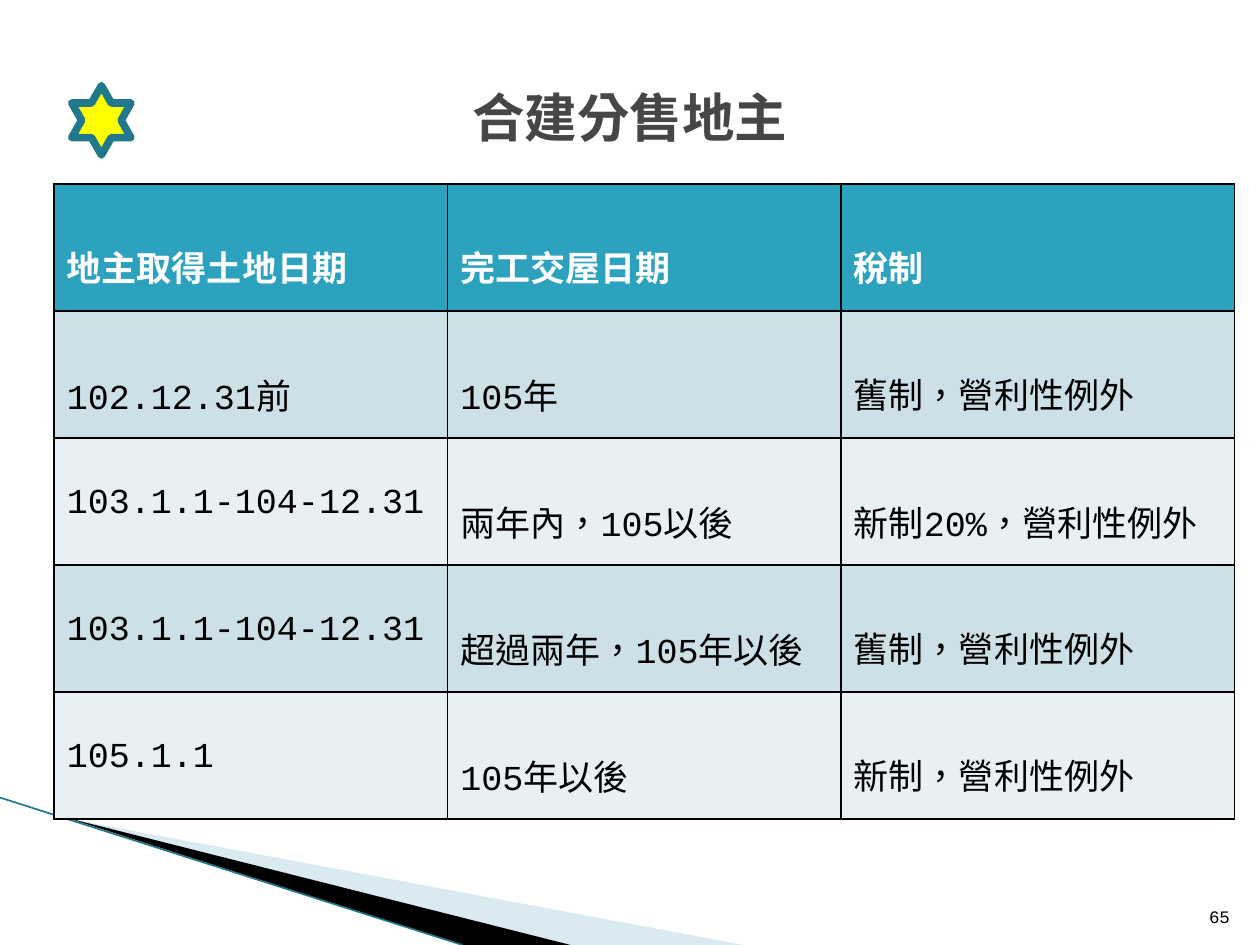
"""Build a slide with a table of tax regimes for landowners in joint construction."""
from lxml.etree import SubElement
from pptx import Presentation
from pptx.dml.color import RGBColor
from pptx.enum.lang import MSO_LANGUAGE_ID as Language
from pptx.enum.shapes import MSO_CONNECTOR as Connector, MSO_SHAPE as Preset
from pptx.enum.text import MSO_ANCHOR as Anchor, PP_ALIGN as Align
from pptx.oxml.ns import qn
from pptx.util import Inches, Pt

TITLE = "合建分售地主"
PAGE_NUMBER = "65"
ROWS = [
    ("地主取得土地日期", "完工交屋日期", "稅制"),
    ("102.12.31前", "105年", "舊制，營利性例外"),
    ("103.1.1-104-12.31", "兩年內，105以後", "新制20%，營利性例外"),
    ("103.1.1-104-12.31", "超過兩年，105年以後", "舊制，營利性例外"),
    ("105.1.1", "105年以後", "新制，營利性例外"),
]
WIDTH, HEIGHT = 10, 7.5
TABLE_PLACE = (0.43, 1.46, 9.37, 5.04)
WEDGES = [
    ("pale", [(0.55, 6.5), (5.9, HEIGHT), (4.53, HEIGHT)], 40),
    ("black", [(0.53, 6.49), (4.53, HEIGHT), (3.67, HEIGHT)], 100),
]
EDGE = (0, 6.33, 3.67, HEIGHT)
THEME = {
    "font": "Courier New",
    "sizes": {"title": 30, "table": 20, "number": 10},
    "colors": {
        "title": "464646", "black": "000000", "white": "FFFFFF", "pale": "A0CBDC",
        "teal": "21788D", "star": "FFFF00", "header": "2DA2BF",
        "bands": ("E8F0F4", "CDE0E8"),
    },
}
COLORS = THEME["colors"]


def rgb(value):
    return RGBColor.from_string(value)


def paint(target, color):
    target.fill.solid()
    target.fill.fore_color.rgb = rgb(color)


def write(frame, text, role, color, bold=False, **layout):
    para = frame.paragraphs[0]
    for name, value in layout.items():
        setattr(para, name, value)
    span = para.add_run()
    span.text = text
    style = {
        "name": THEME["font"], "size": Pt(THEME["sizes"][role]), "bold": bold,
        "language_id": Language.TRADITIONAL_CHINESE,
    }
    for name, value in style.items():
        setattr(span.font, name, value)
    span.font.color.rgb = rgb(color)


def add_wedge(page, color, points, opacity):
    start, *others = [(Inches(x), Inches(y)) for x, y in points]
    builder = page.shapes.build_freeform(*start)
    builder.add_line_segments(others, close=True)
    wedge = builder.convert_to_shape()
    wedge.shadow.inherit = False
    paint(wedge, COLORS[color])
    wedge.line.fill.background()
    if opacity < 100:
        tint = next(wedge.element.iter(qn("a:srgbClr")))
        SubElement(tint, qn("a:alpha"), val=str(opacity * 1000))


def add_edge(page):
    edge = page.shapes.add_connector(Connector.STRAIGHT, *map(Inches, EDGE))
    edge.line.color.rgb = rgb(COLORS["teal"])
    edge.line.width = Pt(0.95)
    SubElement(edge.element.spPr, qn("a:effectLst"))


def add_title(page):
    title = page.shapes.title
    place = {"left": 0.5, "top": 0.3, "width": WIDTH - 1, "height": 1.25}
    for name, value in place.items():
        setattr(title, name, Inches(value))
    title.text_frame.vertical_anchor = Anchor.MIDDLE
    write(title.text_frame, TITLE, "title", COLORS["title"], True, alignment=Align.CENTER)


def add_borders(cell):
    for side in ("a:lnL", "a:lnR", "a:lnT", "a:lnB"):
        border = SubElement(cell._tc.get_or_add_tcPr(), qn(side), w=str(Pt(1)))
        fill = SubElement(border, qn("a:solidFill"))
        SubElement(fill, qn("a:srgbClr"), val=COLORS["black"])


def add_regimes(page):
    place = map(Inches, TABLE_PLACE)
    table = page.shapes.add_table(len(ROWS), len(ROWS[0]), *place).table
    for r, row in enumerate(ROWS):
        header = r == 0
        for c, text in enumerate(row):
            cell = table.cell(r, c)
            add_borders(cell)
            paint(cell, COLORS["header"] if header else COLORS["bands"][r % 2])
            color = COLORS["white" if header else "black"]
            write(cell.text_frame, text, "table", color, header, line_spacing=2.0)


def add_star(page):
    star = page.shapes.add_shape(Preset.STAR_6_POINT, *map(Inches, (0.57, 0.68, 0.47, 0.55)))
    star.shadow.inherit = False
    paint(star, COLORS["star"])
    star.line.color.rgb = rgb(COLORS["teal"])
    star.line.width = Pt(4.33)
    SubElement(star.line._get_or_add_ln(), qn("a:round"))


def add_number(page):
    box = page.shapes.add_textbox(*map(Inches, (9.46, 7.01, 0.4, 0.4)))
    box.text_frame.word_wrap = True
    box.text_frame.vertical_anchor = Anchor.BOTTOM
    write(box.text_frame, PAGE_NUMBER, "number", COLORS["black"], alignment=Align.RIGHT)


def main():
    deck = Presentation()
    deck.slide_width, deck.slide_height = Inches(WIDTH), Inches(HEIGHT)
    page = deck.slides.add_slide(deck.slide_layouts[5])
    for wedge in WEDGES:
        add_wedge(page, *wedge)
    for add_part in (add_edge, add_title, add_regimes, add_star, add_number):
        add_part(page)
    deck.save("out.pptx")


if __name__ == "__main__":
    main()
